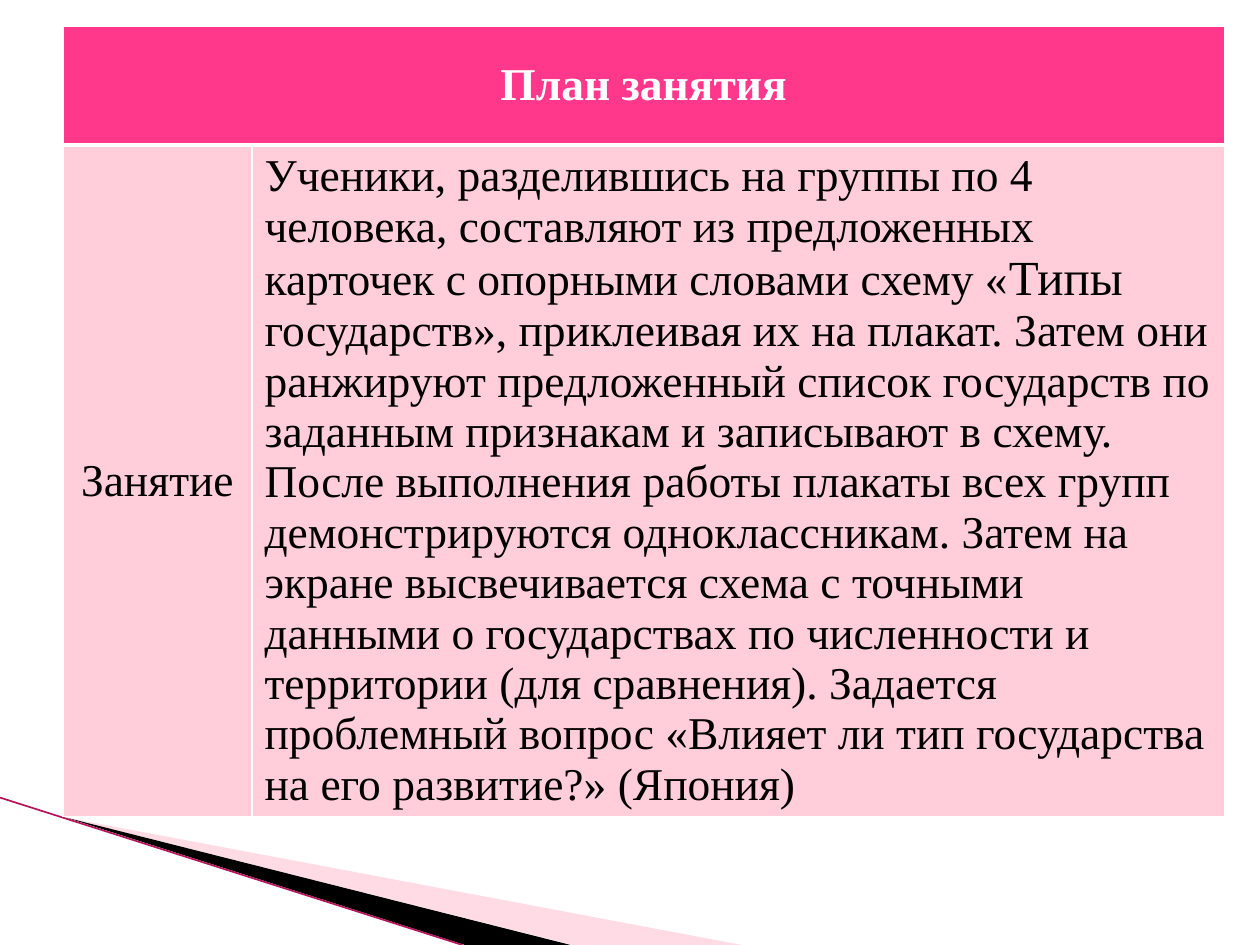
from lxml import etree
from pptx import Presentation
from pptx.dml.color import RGBColor
from pptx.enum.shapes import MSO_CONNECTOR as Conn
from pptx.enum.text import MSO_ANCHOR as Anchor, PP_ALIGN as Align
from pptx.oxml.ns import qn
from pptx.util import Inches, Pt

FONT = "Times New Roman"
BEFORE = (
    "Ученики, разделившись на группы по 4 человека, составляют из "
    "предложенных карточек с опорными словами схему «"
)
AFTER = (
    "государств», приклеивая их на плакат. Затем они ранжируют предложенный "
    "список государств по заданным признакам и записывают в схему. После "
    "выполнения работы плакаты всех групп демонстрируются одноклассникам. "
    "Затем на экране высвечивается схема с точными данными о государствах по "
    "численности и территории (для сравнения). Задается проблемный вопрос "
    "«Влияет ли тип государства на его развитие?» (Япония)"
)


def paint(fill, color):
    fill.solid()
    fill.fore_color.rgb = RGBColor.from_string(color)


def wedge(slide, left, top, points, color, alpha=None):
    """Draw a filled outline; points are offsets from left and top."""
    spots = [(Inches(left + x), Inches(top + y)) for x, y in points]
    pen = slide.shapes.build_freeform(*spots[0])
    pen.add_line_segments(spots[1:])
    shape = pen.convert_to_shape()
    shape.shadow.inherit = False
    shape.line.fill.background()
    paint(shape.fill, color)
    if alpha:
        tone = shape.fill._xPr.find(".//" + qn("a:srgbClr"))
        etree.SubElement(tone, qn("a:alpha")).set("val", str(alpha * 1000))


def add_corner(slide, left, top):
    x, y = left + 0.53, top + 0.16
    wedge(slide, x, y, [(0, 0), (5.36, 1.01), (4.02, 1.01)], "FFA5BF", 40)
    wedge(slide, x, y, [(0, 0), (4, 1.01), (3.16, 1.01)], "000000")
    edge = slide.shapes.add_connector(
        Conn.STRAIGHT, Inches(left), Inches(top),
        Inches(left + 3.67), Inches(top + 1.17))
    edge.line.width = Pt(0.95)
    edge.line.color.rgb = RGBColor.from_string("B4145A")
    etree.SubElement(edge._element.spPr, qn("a:effectLst"))


def set_edges(cell, widths):
    """Add white borders, with widths in points for left, right, top, bottom."""
    props = cell._tc.get_or_add_tcPr()
    for side, width in zip("LRTB", widths):
        line = etree.SubElement(props, qn("a:ln" + side), w=str(Pt(width)))
        fill = etree.SubElement(line, qn("a:solidFill"))
        etree.SubElement(fill, qn("a:srgbClr"), val="FFFFFF")


def set_text(cell, runs, color, align, bold=False):
    cell.vertical_anchor = Anchor.MIDDLE
    para = cell.text_frame.paragraphs[0]
    para.alignment = align
    for text, size in runs:
        run = para.add_run()
        run.text = text
        font = run.font
        font.name, font.size, font.bold = FONT, Pt(size), bold
        font.color.rgb = RGBColor.from_string(color)


def add_plan(slide, left, top, width, height):
    side, head = 1.5, 0.94
    table = slide.shapes.add_table(
        2, 2, Inches(left), Inches(top), Inches(width), Inches(height)).table
    for col, size in zip(table.columns, (side, width - side)):
        col.width = Inches(size)
    for row, size in zip(table.rows, (head, height - head)):
        row.height = Inches(size)
    fills = ("FF388C", "FFCEDA")
    edges = ((1, 1, 1, 3), (1, 1, 3, 1))
    for row, color, widths in zip(table.rows, fills, edges):
        for cell in row.cells:
            set_edges(cell, widths)
            paint(cell.fill, color)
    title = table.cell(0, 0)
    title.merge(table.cell(0, 1))
    set_text(title, [("План занятия", 26)], "FFFFFF", Align.CENTER, True)
    set_text(table.cell(1, 0), [("Занятие", 26)], "000000", Align.CENTER)
    body = [(BEFORE, 26), ("Типы ", 28), (AFTER, 26)]
    set_text(table.cell(1, 1), body, "000000", Align.LEFT)


def main():
    deck = Presentation()
    deck.slide_width, deck.slide_height = Inches(10), Inches(7.5)
    slide = deck.slides.add_slide(deck.slide_layouts[6])
    add_corner(slide, 0, 6.33)
    add_plan(slide, 0.5, 0.21, 9.22, 6.27)
    deck.save("out.pptx")


if __name__ == "__main__":
    main()
